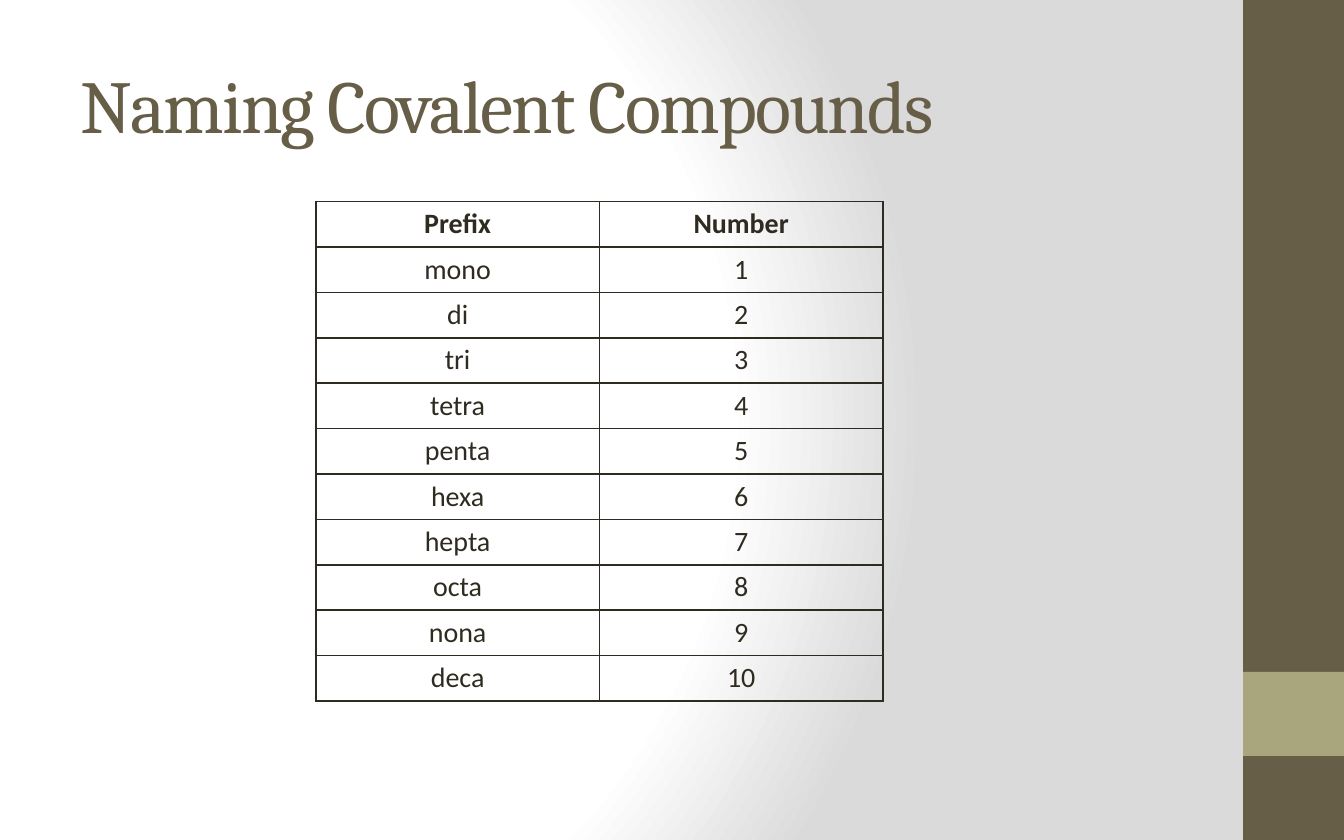
from pptx import Presentation, oxml as ox
from pptx import util as u
from pptx.dml import color as co
from pptx.enum import shapes, text
from pptx.oxml import ns

WIDE, HIGH = u.Inches(10), u.Inches(6.25)
BROWN = co.RGBColor(0x67, 0x5E, 0x47)
OLIVE = co.RGBColor(0xA9, 0xA5, 0x7C)
INK = co.RGBColor(0x2F, 0x2B, 0x20)
WHITE = co.RGBColor(0xFF, 0xFF, 0xFF)
GREY = co.RGBColor(0xDA, 0xDA, 0xDA)

HEAD = ("Prefix", "Number")
NAMES = "mono di tri tetra penta hexa hepta octa nona deca".split()


def share(left, top, wide, high):
    return (round(left * WIDE), round(top * HIGH),
            round(wide * WIDE), round(high * HIGH))


def add_run(para, words, font, size, color, bold=False):
    run = para.add_run()
    run.text = words
    run.font.name = font
    run.font.size = u.Pt(size)
    run.font.bold = bold
    run.font.color.rgb = color
    return run


def add_glow(slide):
    stops = "".join(
        f'<a:gs pos="{pos * 1000}"><a:srgbClr val="{tone}"/></a:gs>'
        for pos, tone in ((0, WHITE), (75, WHITE), (100, GREY)))
    slide.element.cSld.insert(0, ox.parse_xml(
        f'<p:bg {ns.nsdecls("p", "a")}><p:bgPr><a:gradFill rotWithShape="1">'
        f'<a:gsLst>{stops}</a:gsLst><a:path path="circle">'
        '<a:fillToRect l="20000" t="50000" r="100000" b="50000"/></a:path>'
        '</a:gradFill><a:effectLst/></p:bgPr></p:bg>'))


def add_band(slide, box):
    left, top, wide, high = box
    parts = ((0, 1, BROWN), (0.8, 0.1, OLIVE))
    for start, part, tone in parts:
        bar = slide.shapes.add_shape(
            shapes.MSO_SHAPE.RECTANGLE, left, top + round(start * high),
            wide, round(part * high))
        bar.shadow.inherit = False
        bar.fill.solid()
        bar.fill.fore_color.rgb = tone
        bar.line.fill.background()


def set_title(slide, box):
    title = slide.shapes.title
    title.left, title.top, title.width, title.height = box
    frame = title.text_frame
    frame.auto_size = text.MSO_AUTO_SIZE.NONE
    frame.word_wrap = True
    frame.vertical_anchor = text.MSO_ANCHOR.MIDDLE
    para = frame.paragraphs[0]
    para.alignment = text.PP_ALIGN.LEFT
    run = add_run(para, "Naming Covalent Compounds", "Cambria", 40, BROWN)
    run.font._element.set("spc", "-100")


def add_edges(cell):
    props = cell._tc.get_or_add_tcPr()
    for spot, side in enumerate("LRTB"):
        props.insert(spot, ox.parse_xml(
            f'<a:ln{side} {ns.nsdecls("a")} w="{u.Pt(1)}"><a:solidFill>'
            f'<a:srgbClr val="{INK}"/></a:solidFill></a:ln{side}>'))


def add_grid(slide, box):
    rows = [HEAD] + [(name, str(num)) for num, name in enumerate(NAMES, 1)]
    grid = slide.shapes.add_table(len(rows), len(HEAD), *box).table
    grid.first_row = grid.horz_banding = False
    for line, row in enumerate(rows):
        for col, words in enumerate(row):
            cell = grid.cell(line, col)
            cell.margin_left = cell.margin_right = u.Inches(0.1)
            cell.margin_top = cell.margin_bottom = u.Inches(0.04)
            cell.fill.background()
            add_edges(cell)
            para = cell.text_frame.paragraphs[0]
            para.alignment = text.PP_ALIGN.CENTER
            add_run(para, words, "Calibri", 15, INK, line == 0)


def main():
    deck = Presentation()
    deck.slide_width, deck.slide_height = WIDE, HIGH
    slide = deck.slides.add_slide(deck.slide_layouts.get_by_name("Title Only"))
    add_glow(slide)
    add_band(slide, share(0.925, 0, 0.075, 1))
    set_title(slide, share(0.05, 0.04, 0.833, 0.166))
    add_grid(slide, share(0.235, 0.24, 0.422, 0.595))
    deck.save("out.pptx")


if __name__ == "__main__":
    main()
